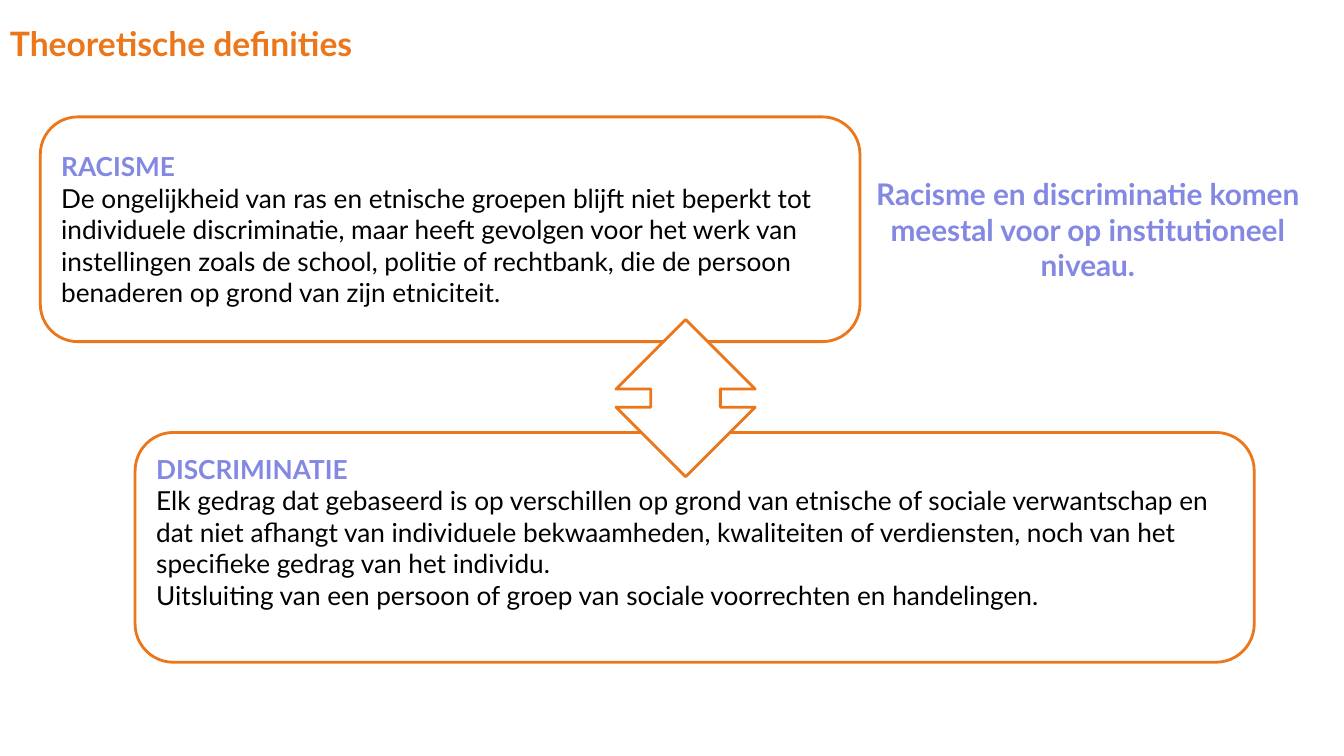
from dataclasses import dataclass

from pptx import Presentation
from pptx.dml.color import RGBColor
from pptx.enum.shapes import MSO_SHAPE
from pptx.enum.text import MSO_ANCHOR, PP_ALIGN
from pptx.util import Inches, Pt

ROUNDED = MSO_SHAPE.ROUNDED_RECTANGLE
UP_DOWN_ARROW = MSO_SHAPE.UP_DOWN_ARROW
MIDDLE = MSO_ANCHOR.MIDDLE
LEFT, CENTER, JUSTIFY = PP_ALIGN.LEFT, PP_ALIGN.CENTER, PP_ALIGN.JUSTIFY


@dataclass(frozen=True)
class Theme:
    font: str = "Lato"
    orange: RGBColor = RGBColor(0xEC, 0x77, 0x1B)
    lilac: RGBColor = RGBColor(0x83, 0x88, 0xE3)
    black: RGBColor = RGBColor(0, 0, 0)
    white: RGBColor = RGBColor(0xFF, 0xFF, 0xFF)
    title_size: float = 24
    remark_size: float = 21.3
    body_size: float = 18.7
    outline: float = 2


THEME = Theme()


@dataclass(frozen=True)
class Area:
    left: float
    top: float
    width: float
    height: float

    def lengths(self) -> tuple:
        return tuple(map(Inches, (self.left, self.top, self.width, self.height)))


@dataclass(frozen=True)
class Heading:
    area: Area
    text: str
    size: float
    color: RGBColor
    align: PP_ALIGN


@dataclass(frozen=True)
class Definition:
    area: Area
    term: str
    sentences: tuple[str, ...]
    bottom_inset: float = 0.05


HEADINGS = (
    Heading(Area(0, 0.08, 13.33, 0.69), "Theoretische definities",
            THEME.title_size, THEME.orange, JUSTIFY),
    Heading(Area(8.53, 1.16, 4.52, 2.23),
            "Racisme en discriminatie komen meestal voor op institutioneel niveau.",
            THEME.remark_size, THEME.lilac, CENTER),
)

DEFINITIONS = (
    Definition(Area(0.4, 1.16, 8.13, 2.23), "RACISME", (
        "De ongelijkheid van ras en etnische groepen blijft niet beperkt tot "
        "individuele discriminatie, maar heeft gevolgen voor het werk van "
        "instellingen zoals de school, politie of rechtbank, die de persoon "
        "benaderen op grond van zijn etniciteit.",
    )),
    Definition(Area(1.34, 4.29, 11.1, 2.28), "DISCRIMINATIE", (
        "Elk gedrag dat gebaseerd is op verschillen op grond van etnische of "
        "sociale verwantschap en dat niet afhangt van individuele bekwaamheden, "
        "kwaliteiten of verdiensten, noch van het specifieke gedrag van het individu.",
        "Uitsluiting van een persoon of groep van sociale voorrechten en handelingen.",
    ), bottom_inset=0.36),
)

ARROW = Area(6.11, 3.17, 1.38, 1.56)


def style_paragraph(para, text: str, size: float, color: RGBColor,
                    bold: bool, align: PP_ALIGN) -> None:
    para.text = text
    para.alignment = align
    para.font.name = THEME.font
    para.font.size = Pt(size)
    para.font.bold = bold
    para.font.color.rgb = color


def add_heading(page, heading: Heading) -> None:
    frame = page.shapes.add_textbox(*heading.area.lengths()).text_frame
    frame.word_wrap = True
    frame.vertical_anchor = MIDDLE
    style_paragraph(frame.paragraphs[0], heading.text, heading.size,
                    heading.color, True, heading.align)


def add_outlined(page, kind: MSO_SHAPE, area: Area):
    shape = page.shapes.add_shape(kind, *area.lengths())
    shape.shadow.inherit = False
    shape.fill.solid()
    shape.fill.fore_color.rgb = THEME.white
    shape.line.color.rgb = THEME.orange
    shape.line.width = Pt(THEME.outline)
    return shape


def add_definition(page, definition: Definition) -> None:
    frame = add_outlined(page, ROUNDED, definition.area).text_frame
    frame.word_wrap = True
    frame.vertical_anchor = MIDDLE
    frame.margin_bottom = Inches(definition.bottom_inset)
    style_paragraph(frame.paragraphs[0], definition.term, THEME.body_size,
                    THEME.lilac, True, LEFT)
    for sentence in definition.sentences:
        style_paragraph(frame.add_paragraph(), sentence, THEME.body_size,
                        THEME.black, False, LEFT)


def main() -> None:
    deck = Presentation()
    deck.slide_width, deck.slide_height = Inches(13.33), Inches(7.5)
    page = deck.slides.add_slide(deck.slide_layouts[6])
    for heading in HEADINGS:
        add_heading(page, heading)
    for definition in DEFINITIONS:
        add_definition(page, definition)
    add_outlined(page, UP_DOWN_ARROW, ARROW)
    deck.save("out.pptx")


if __name__ == "__main__":
    main()
